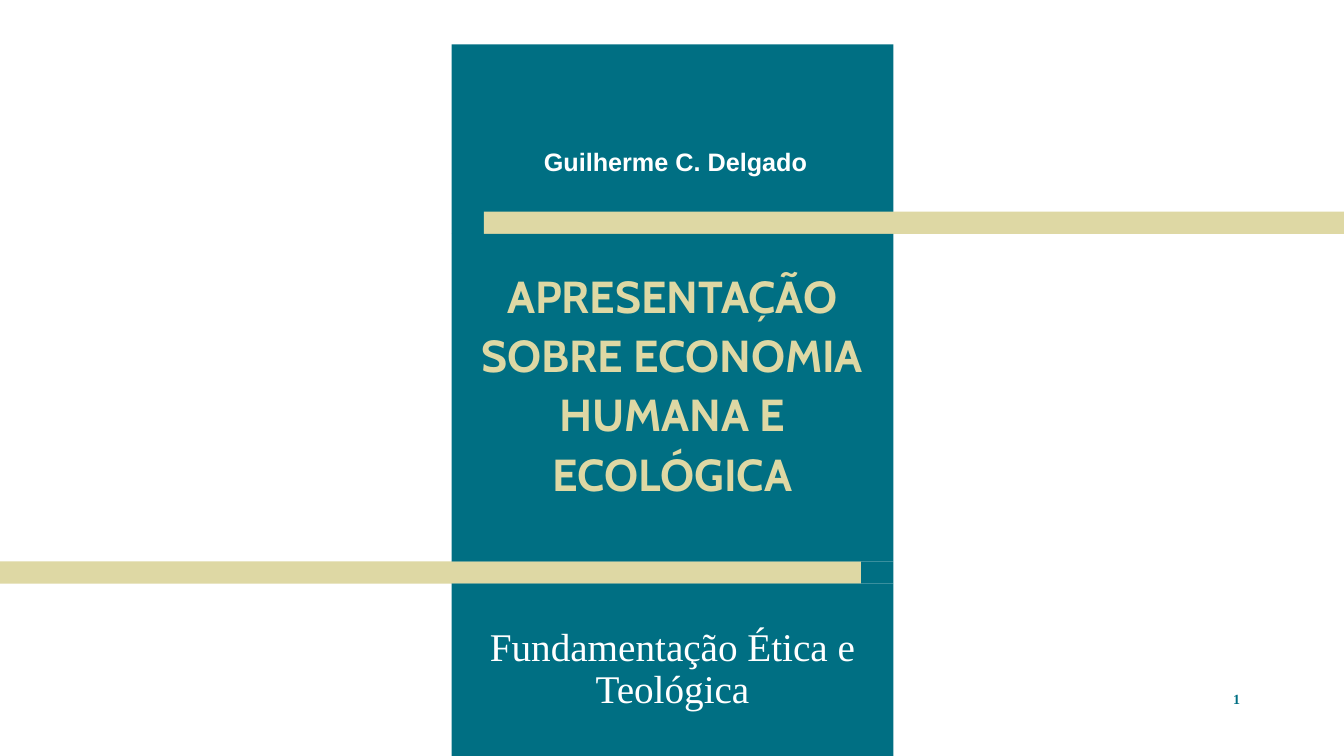
"""Build the title slide of a talk on human and ecological economics."""
import pptx
import pptx.dml.color
import pptx.enum.shapes
import pptx.enum.text
import pptx.util

Inches = pptx.util.Inches
ANCHOR = pptx.enum.text.MSO_ANCHOR
ALIGN = pptx.enum.text.PP_ALIGN

THEME = {
    "teal": "006F83", "sand": "DED8A4", "white": "FFFFFF",
    "title": ("Cabin", 32, True, "sand"),
    "subtitle": ("Times New Roman", 28, False, "white"),
    "number": ("Times New Roman", 10, True, "teal"),
    "author": ("Arial", 18, True, "white"),
}
AUTHOR = "Guilherme C. Delgado"
TITLE = "APRESENTAÇÃO SOBRE ECONOMIA HUMANA E ECOLÓGICA"
SUBTITLE = "Fundamentação Ética e Teológica"
PAGE_NUMBER = "1"

SLIDE_WIDTH, SLIDE_HEIGHT = 13.33, 7.5
PANEL_LEFT, PANEL_WIDTH = 4.48, 4.38
PANEL_TOP, TITLE_TOP, STEP_TOP, SUBTITLE_TOP = 0.44, 2.32, 5.57, 5.79
BAR_HEIGHT, BAR_INSET = 0.22, 0.32


def color(name):
    return pptx.dml.color.RGBColor.from_string(THEME[name])


def add_block(slide, left, top, width, height, fill):
    shape = slide.shapes.add_shape(
        pptx.enum.shapes.MSO_SHAPE.RECTANGLE,
        Inches(left), Inches(top), Inches(width), Inches(height))
    shape.shadow.inherit = False
    shape.fill.solid()
    shape.fill.fore_color.rgb = color(fill)
    shape.line.fill.background()
    return shape


def add_label(slide, left, top, width, height):
    return slide.shapes.add_textbox(
        Inches(left), Inches(top), Inches(width), Inches(height))


def write(shape, text, style, margins, anchor, spacing=1.0, wrap=True):
    frame = shape.text_frame
    frame.text = text
    frame.word_wrap = wrap
    frame.vertical_anchor = anchor
    (frame.margin_left, frame.margin_top,
     frame.margin_right, frame.margin_bottom) = map(Inches, margins)
    paragraph = frame.paragraphs[0]
    paragraph.alignment = ALIGN.CENTER
    paragraph.line_spacing = spacing
    font = paragraph.runs[0].font
    font.name, size, font.bold, color_name = THEME[style]
    font.size = pptx.util.Pt(size)
    font.color.rgb = color(color_name)


def main():
    presentation = pptx.Presentation()
    presentation.slide_width = Inches(SLIDE_WIDTH)
    presentation.slide_height = Inches(SLIDE_HEIGHT)
    slide = presentation.slides.add_slide(presentation.slide_layouts[6])

    def add_panel(top, bottom):
        return add_block(slide, PANEL_LEFT, top, PANEL_WIDTH, bottom - top, "teal")

    upper_bar_left = PANEL_LEFT + BAR_INSET
    lower_bar_right = PANEL_LEFT + PANEL_WIDTH - BAR_INSET
    add_panel(PANEL_TOP, TITLE_TOP)
    add_block(slide, upper_bar_left, TITLE_TOP - BAR_HEIGHT,
              SLIDE_WIDTH - upper_bar_left, BAR_HEIGHT, "sand")
    add_panel(STEP_TOP, SUBTITLE_TOP)
    add_block(slide, 0, STEP_TOP, lower_bar_right, BAR_HEIGHT, "sand")

    write(add_panel(TITLE_TOP, STEP_TOP), TITLE, "title",
          (0.1, 0.08, 0.1, 0.61), ANCHOR.BOTTOM, 1.1)
    write(add_panel(SUBTITLE_TOP, SLIDE_HEIGHT), SUBTITLE, "subtitle",
          (0.1, 0.1, 0.1, 0.1), ANCHOR.MIDDLE, 0.9)
    write(add_label(slide, 12.12, 6.85, 0.29, 0.25), PAGE_NUMBER, "number",
          (0, 0, 0, 0), ANCHOR.TOP)
    write(add_label(slide, 5.28, 1.4, 2.84, 0.4), AUTHOR, "author",
          (0.1, 0.05, 0.1, 0.05), ANCHOR.TOP, wrap=False)

    presentation.save("out.pptx")


if __name__ == "__main__":
    main()
